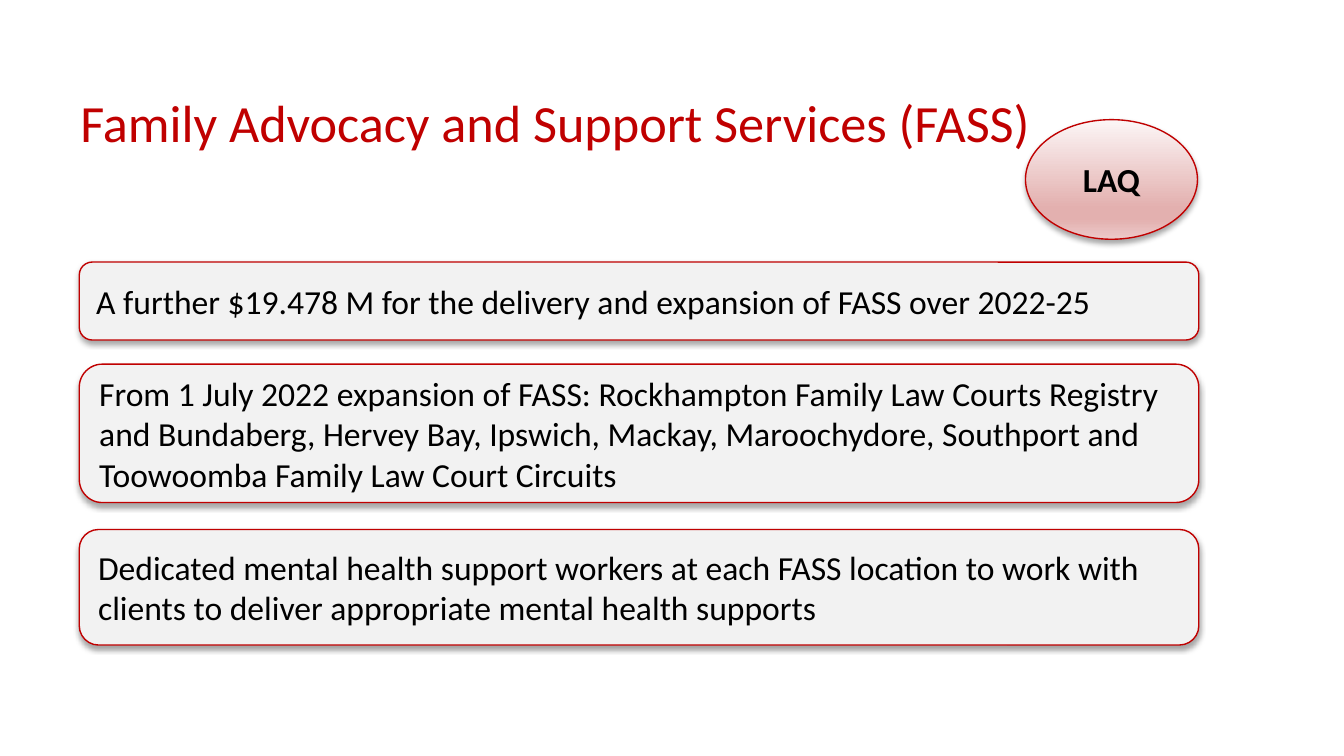
from dataclasses import dataclass

from lxml import etree
from pptx import Presentation
from pptx.dml.color import RGBColor
from pptx.enum.shapes import MSO_SHAPE
from pptx.enum.text import MSO_ANCHOR, PP_ALIGN
from pptx.oxml.ns import qn
from pptx.util import Inches, Pt

ROUNDED = MSO_SHAPE.ROUNDED_RECTANGLE
OVAL = MSO_SHAPE.OVAL
MIDDLE = MSO_ANCHOR.MIDDLE
LEFT, CENTER = PP_ALIGN.LEFT, PP_ALIGN.CENTER

PAGE_WIDTH = 10
PAGE_HEIGHT = PAGE_WIDTH * 9 / 16
FONT = "Calibri"
RED, BLACK, GREY = "C00000", "000000", "F2F2F2"
BADGE_STOPS = [(0, "FCF6F6"), (74, "E3B0AF"), (83, "E3B0AF"), (100, "ECCACA")]
PANEL_LEFT, PANEL_WIDTH = 0.59, 8.33


@dataclass
class Panel:
    top: float
    height: float
    text: str


PANELS = [
    Panel(1.95, 0.58, "A further $19.478 M for the delivery and expansion of FASS over 2022-25"),
    Panel(2.71, 1.03, "From 1 July 2022 expansion of FASS: Rockhampton Family Law Courts Registry "
          "and Bundaberg, Hervey Bay, Ipswich, Mackay, Maroochydore, Southport and "
          "Toowoomba Family Law Court Circuits"),
    Panel(3.94, 0.86, "Dedicated mental health support workers at each FASS location to work with "
          "clients to deliver appropriate mental health supports"),
]


def color(value: str) -> RGBColor:
    return RGBColor.from_string(value)


def write(frame, text: str, size: float, ink: str, align=LEFT, bold=False, after=0) -> None:
    frame.word_wrap = True
    para = frame.paragraphs[0]
    para.alignment = align
    para.space_after = Pt(after)
    span = para.add_run()
    span.text = text
    span.font.name = FONT
    span.font.size = Pt(size)
    span.font.bold = bold
    span.font.color.rgb = color(ink)


def add_soft_shadow(shape) -> None:
    shape.shadow.inherit = False
    effects = shape._element.spPr.find(qn("a:effectLst"))
    shadow = etree.SubElement(effects, qn("a:outerShdw"), blurRad=str(Pt(3.1)),
                              dist=str(Pt(1.8)), dir="5400000", rotWithShape="0")
    tint = etree.SubElement(shadow, qn("a:srgbClr"), val=BLACK)
    etree.SubElement(tint, qn("a:alpha"), val="35000")


def fill_downward_gradient(shape, stops: list[tuple[int, str]]) -> None:
    shape.fill.gradient()
    shape.fill.gradient_angle = 270
    stop_list = shape._element.spPr.find(qn("a:gradFill")).find(qn("a:gsLst"))
    for old_stop in list(stop_list):
        stop_list.remove(old_stop)
    for percent, value in stops:
        stop = etree.SubElement(stop_list, qn("a:gs"), pos=str(percent * 1000))
        etree.SubElement(stop, qn("a:srgbClr"), val=value)


def add_outlined_shape(page, kind, left: float, top: float, width: float, height: float):
    shape = page.shapes.add_shape(kind, Inches(left), Inches(top), Inches(width), Inches(height))
    shape.line.color.rgb = color(RED)
    shape.line.width = Pt(0.75)
    shape.text_frame.vertical_anchor = MIDDLE
    add_soft_shadow(shape)
    return shape


def add_title(page) -> None:
    box = page.shapes.add_textbox(Inches(0.5), Inches(0.62), Inches(9), Inches(4.94))
    write(box.text_frame, "Family Advocacy and Support Services (FASS)", 28, RED, after=6)


def add_panel(page, panel: Panel) -> None:
    shape = add_outlined_shape(page, ROUNDED, PANEL_LEFT, panel.top, PANEL_WIDTH, panel.height)
    shape.fill.solid()
    shape.fill.fore_color.rgb = color(GREY)
    write(shape.text_frame, panel.text, 18, BLACK, after=6)


def add_badge(page) -> None:
    badge = add_outlined_shape(page, OVAL, 7.63, 0.89, 1.28, 0.89)
    fill_downward_gradient(badge, BADGE_STOPS)
    write(badge.text_frame, "LAQ", 18, BLACK, align=CENTER, bold=True)


def main() -> None:
    deck = Presentation()
    deck.slide_width, deck.slide_height = Inches(PAGE_WIDTH), Inches(PAGE_HEIGHT)
    page = deck.slides.add_slide(deck.slide_layouts[6])
    add_title(page)
    for panel in PANELS:
        add_panel(page, panel)
    add_badge(page)
    deck.save("out.pptx")


if __name__ == "__main__":
    main()
